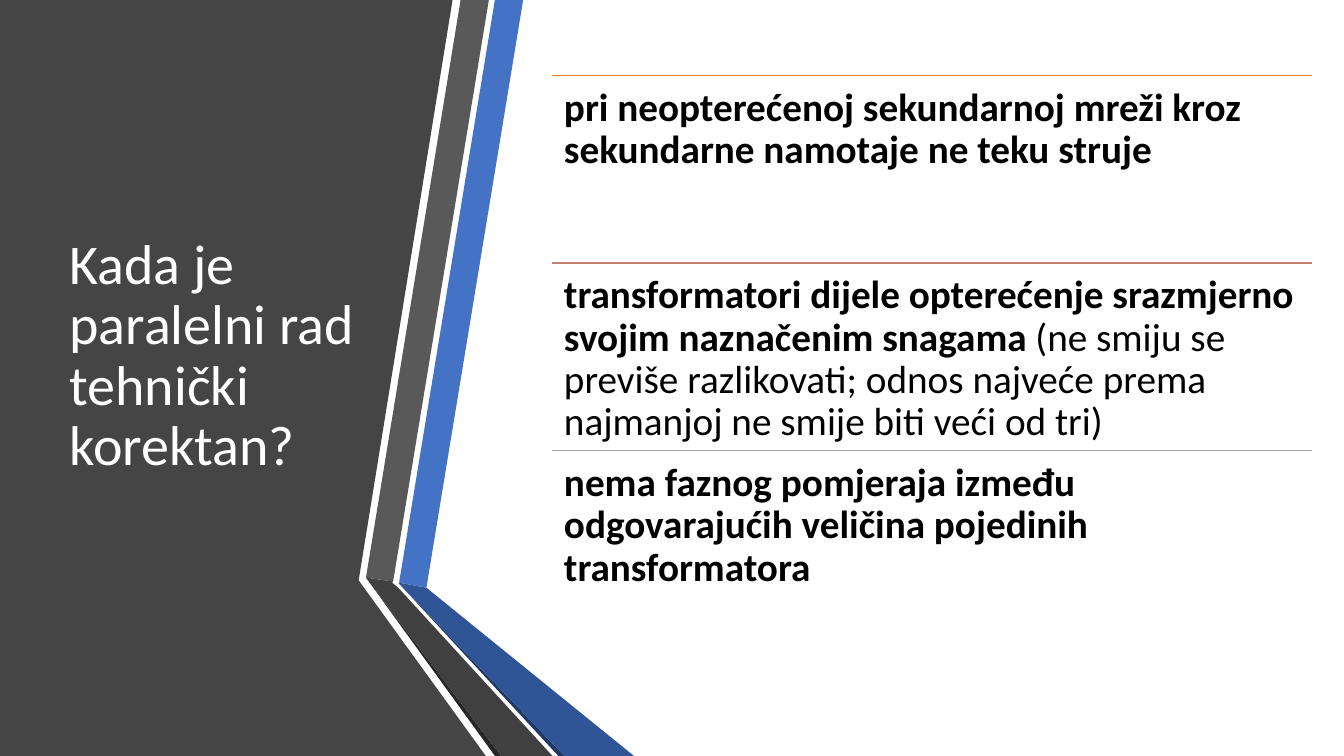
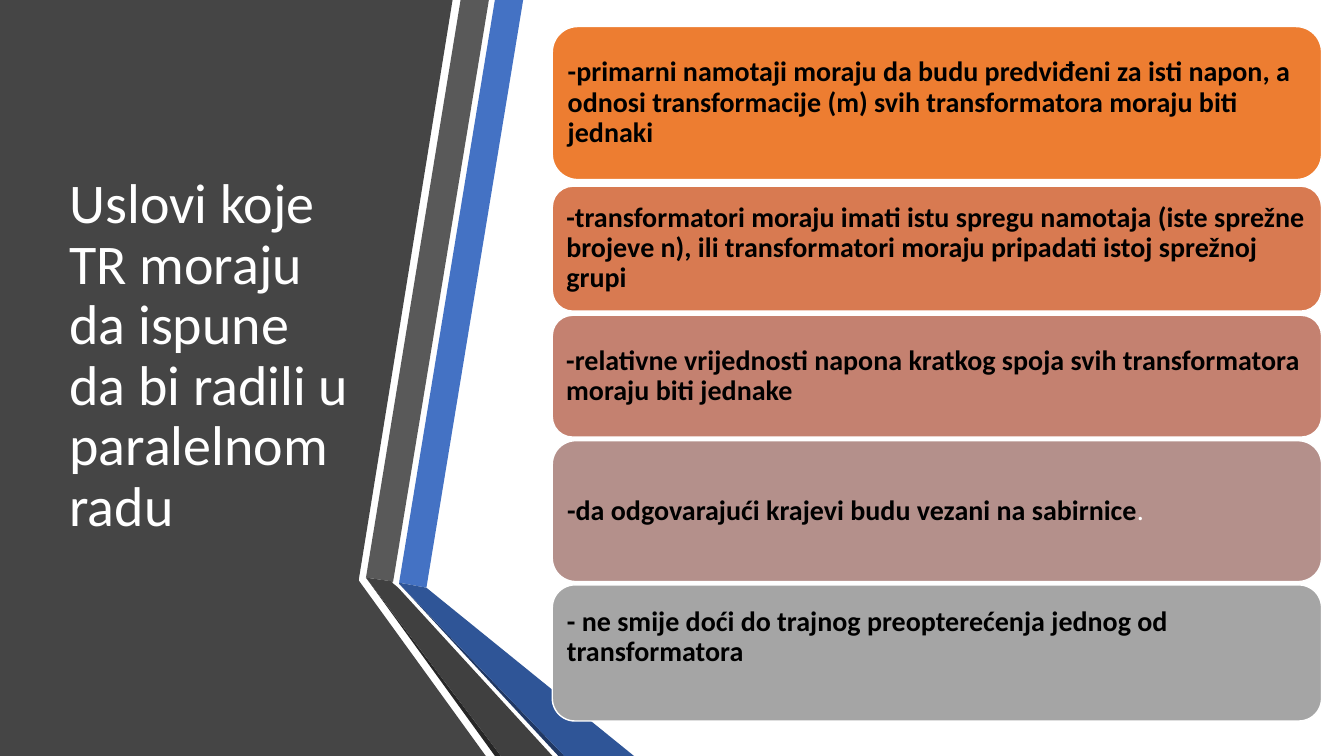
from dataclasses import dataclass

from lxml.etree import SubElement
from pptx import Presentation
from pptx.dml.color import RGBColor
from pptx.enum.shapes import MSO_CONNECTOR as Conn, MSO_SHAPE as Form
from pptx.enum.text import MSO_ANCHOR as Anchor, MSO_AUTO_SIZE as Auto, PP_ALIGN as Align
from pptx.oxml.ns import qn
from pptx.slide import Slide
from pptx.text.text import TextFrame
from pptx.util import Pt

FONT, WHITE, BLACK = "Calibri", "FFFFFF", "000000"
WIDE, HIGH = 960, 540
LEFT = 394.5  # left edge of the content


@dataclass
class Run:
    text: str
    bold: bool = True
    color: str = BLACK


@dataclass
class Band:
    color: str
    dots: list[tuple[float, float]]


@dataclass
class Row:
    color: str
    runs: list[Run]


@dataclass
class Card:
    top: float
    high: float
    color: str
    runs: list[Run]
    foot: float = 5.7  # bottom inset


# Dark panel and folded ribbons, from back to front
BANDS = [
    Band("454545", [(0, 0), (323.3, 0), (256.3, 414), (256.3, 414.7), (347, HIGH), (0, HIGH)]),
    Band("4472C4", [(285.1, 416.2), (304.6, 419.8), (373.7, 0), (353.5, 0)]),
    Band("595959", [(349.2, 0), (329, 0), (261.4, 412.6), (280.8, 415.4)]),
    Band("262626", [(261.4, 412.6), (353.5, HIGH), (357.8, HIGH)]),
    Band("203864", [(285.1, 416.9), (398.9, HIGH), (403.2, HIGH)]),
    Band("2F5597", [(285.1, 416.9), (403.2, HIGH), (452.9, HIGH), (304.6, 419.8), (285.1, 416.2)]),
    Band("404040", [(394.6, HIGH), (284.4, 419.8), (280.1, 416.2), (280.8, 415.4),
                    (261.4, 412.6), (357.8, HIGH)]),
]

ROWS = [
    Row("ED7D31", [Run("pri neopterećenoj sekundarnoj mreži kroz sekundarne namotaje ne teku struje")]),
    Row("C48170", [
        Run("transformatori dijele opterećenje srazmjerno svojim naznačenim snagama "),
        Run("(ne smiju se previše razlikovati; odnos najveće prema najmanjoj "
            "ne smije biti veći od tri)", bold=False)]),
    Row("A5A5A5", [Run("nema faznog pomjeraja između odgovarajućih veličina pojedinih transformatora")]),
]

CARDS = [
    Card(19, 109.3, "ED7D31", [
        Run("-primarni namotaji moraju da budu predviđeni za isti napon, a odnosi "
            "transformacije (m) svih transformatora moraju biti jednaki")]),
    Card(133, 89.3, "D87A51", [
        Run("-transformatori moraju imati istu spregu namotaja (iste sprežne brojeve n), "
            "ili transformatori moraju pripadati istoj sprežnoj grupi")]),
    Card(225.2, 87, "C48170", [
        Run("-relativne vrijednosti napona kratkog spoja svih transformatora moraju biti jednake")]),
    Card(314.8, 100.6, "B4908B", [
        Run("-da odgovarajući krajevi budu vezani na sabirnice"),
        Run(".", bold=False, color=WHITE)]),
    Card(417.8, 97.2, "A5A5A5", [
        Run("- ne smije doći do trajnog preopterećenja jednog od transformatora")], foot=27.7),
]


def paint(part, color: str) -> None:
    """Give a fill or a line one solid colour."""
    fill = getattr(part, "fill", part)
    fill.solid()
    fill.fore_color.rgb = RGBColor.from_string(color)


def say(frame: TextFrame, runs: list[Run], *, size: float, anchor=Anchor.MIDDLE,
        pad: float = 7.2, edge: float = 3.6, foot: float | None = None) -> None:
    """Write one left-aligned paragraph; pad is left and right, edge is top and bottom."""
    frame.word_wrap, frame.auto_size = True, Auto.NONE
    frame.vertical_anchor = anchor
    frame.margin_left = frame.margin_right = Pt(pad)
    frame.margin_top = Pt(edge)
    frame.margin_bottom = Pt(edge if foot is None else foot)
    para = frame.paragraphs[0]
    para.alignment, para.line_spacing = Align.LEFT, 0.9
    for item in runs:
        run = para.add_run()
        run.text = item.text
        font = run.font
        font.name, font.size, font.bold = FONT, Pt(size), item.bold
        font.color.rgb = RGBColor.from_string(item.color)


def add_band(slide: Slide, band: Band) -> None:
    dots = [(Pt(x), Pt(y)) for x, y in band.dots]
    pen = slide.shapes.build_freeform(*dots[0], scale=1.0)
    pen.add_line_segments(dots[1:], close=True)
    shape = pen.convert_to_shape()
    shape.shadow.inherit = False
    paint(shape, band.color)
    shape.line.fill.background()


def add_row(slide: Slide, row: Row, top: float) -> None:
    wide, high = 543, 134
    rule = slide.shapes.add_connector(Conn.STRAIGHT, Pt(LEFT), Pt(top), Pt(LEFT + wide), Pt(top))
    paint(rule.line, row.color)
    rule.line.width = Pt(1)
    SubElement(rule.element.spPr, qn("a:effectLst"))
    box = slide.shapes.add_textbox(Pt(LEFT), Pt(top), Pt(wide), Pt(high))
    say(box.text_frame, row.runs, size=28, anchor=Anchor.TOP, pad=8.4, edge=8.4)


def add_card(slide: Slide, card: Card) -> None:
    shape = slide.shapes.add_shape(Form.ROUNDED_RECTANGLE, Pt(LEFT), Pt(card.top),
                                   Pt(549.5), Pt(card.high))
    shape.shadow.inherit = False
    paint(shape, card.color)
    paint(shape.line, WHITE)
    shape.line.width = Pt(1)
    say(shape.text_frame, card.runs, size=20, pad=5.7, edge=5.7, foot=card.foot)


def add_slide(deck, title: str) -> Slide:
    """Start a slide with the shared panel, ribbons and title."""
    slide = deck.slides.add_slide(deck.slide_layouts[5])
    for band in BANDS:
        add_band(slide, band)
    head = slide.shapes.title
    head.left, head.top, head.width, head.height = Pt(42.5), Pt(54), Pt(219), Pt(402)
    say(head.text_frame, [Run(title, bold=False, color=WHITE)], size=40)
    # Bring the title in front of the panel
    head.element.getparent().append(head.element)
    return slide


def main() -> None:
    deck = Presentation()
    deck.slide_width, deck.slide_height = Pt(WIDE), Pt(HIGH)

    # Ruled list
    slide = add_slide(deck, "Kada je paralelni rad tehnički korektan?")
    for i, row in enumerate(ROWS):
        add_row(slide, row, 54 + 134 * i)

    # Stacked cards
    slide = add_slide(deck, "Uslovi koje TR moraju da ispune da bi radili u paralelnom radu")
    for card in CARDS:
        add_card(slide, card)

    deck.save("out.pptx")


if __name__ == "__main__":
    main()
